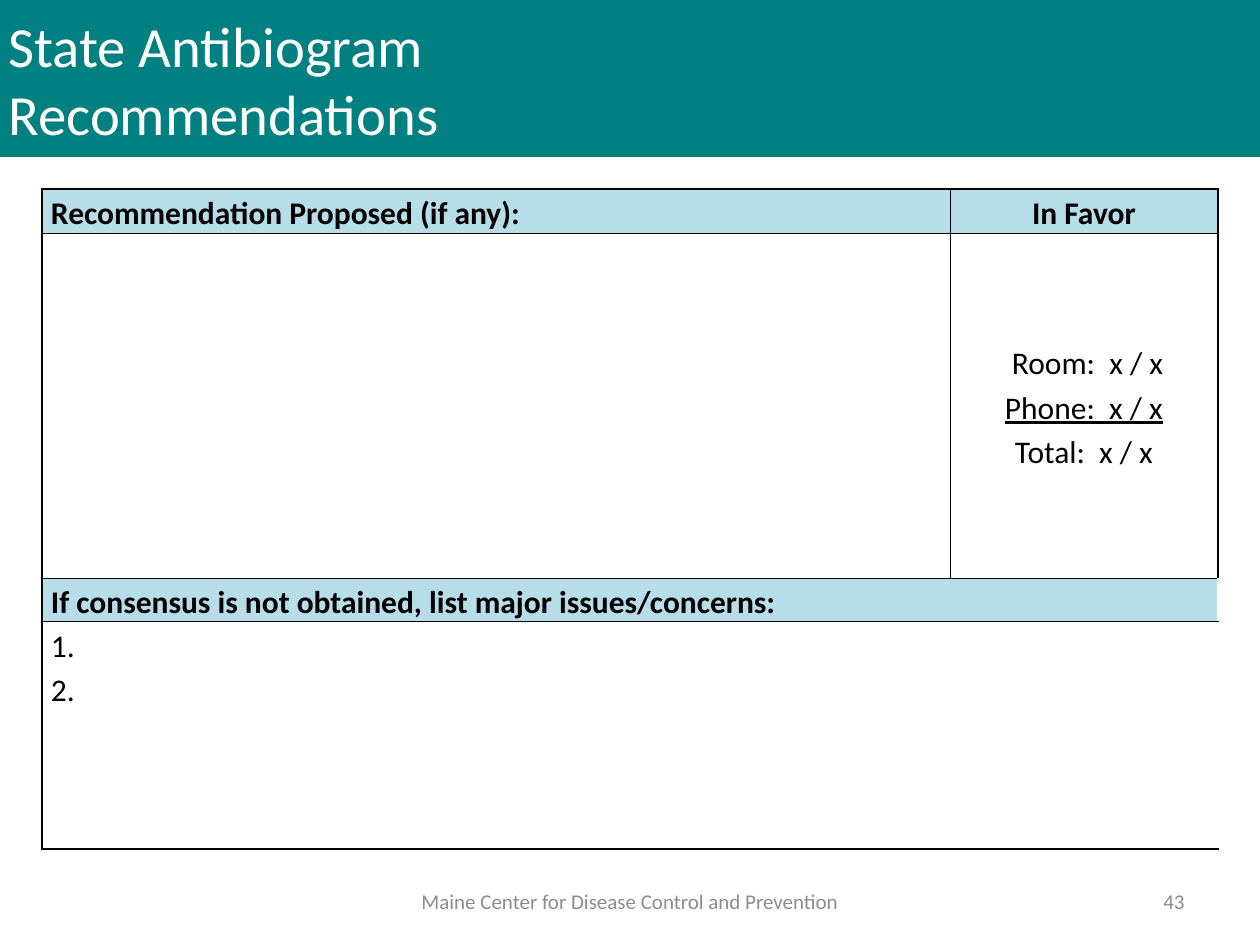
"""Build the State Antibiogram Recommendations slide."""
from lxml.etree import SubElement
from pptx import Presentation
from pptx.dml.color import RGBColor
from pptx.enum.text import MSO_ANCHOR, MSO_AUTO_SIZE, PP_ALIGN
from pptx.oxml.ns import qn
from pptx.util import Emu, Pt

SCALE = 914400 / 126
COLORS = {"teal": "008080", "header": "B6DDE8", "white": "FFFFFF",
          "black": "000000", "grey": "8C8C8C"}


def px(length):
    return Emu(round(length * SCALE))


def write(frame, text, size=18, color="black", bold=False, align=PP_ALIGN.LEFT,
          spacing=1.0, underlined=None):
    frame.text = text
    for para in frame.paragraphs:
        para.alignment = align
        para.line_spacing = spacing
        for line_break in para._p.findall(qn("a:br")):
            SubElement(line_break, qn("a:rPr"), sz=str(round(size * 100)))
        for span in para.runs:
            span.font.name = "Calibri"
            span.font.size = Pt(size)
            span.font.bold = bold
            span.font.underline = span.text == underlined
            span.font.color.rgb = RGBColor.from_string(COLORS[color])


deck = Presentation()
deck.slide_width, deck.slide_height = px(1260), px(945)
page = deck.slides.add_slide(deck.slide_layouts[5])

title = page.shapes.title
title.left, title.top, title.width, title.height = px(-4), px(0), px(1264), px(157)
title.fill.solid()
title.fill.fore_color.rgb = RGBColor.from_string(COLORS["teal"])
write(title.text_frame, "State Antibiogram\vRecommendations", size=32.4, color="white")
title.text_frame.auto_size = MSO_AUTO_SIZE.NONE
title.text_frame.vertical_anchor = MSO_ANCHOR.MIDDLE

footers = [
    ("Maine Center for Disease Control and Prevention", 378, 504, PP_ALIGN.CENTER),
    ("43", 903, 294, PP_ALIGN.RIGHT),
]
for text, left, width, align in footers:
    box = page.shapes.add_textbox(px(left), px(876), px(width), px(50))
    box.text_frame.word_wrap = True
    box.text_frame.vertical_anchor = MSO_ANCHOR.MIDDLE
    write(box.text_frame, text, size=12, color="grey", align=align)

column_widths = [908, 268]
row_heights = [44, 345, 44, 227]
table = page.shapes.add_table(4, 2, px(42), px(189), px(sum(column_widths)),
                              px(sum(row_heights))).table
table.first_row = table.horz_banding = False
for column, width in zip(table.columns, column_widths):
    column.width = px(width)
for row, height in zip(table.rows, row_heights):
    row.height = px(height)
merged_rows = [2, 3]
for row in merged_rows:
    table.cell(row, 0).merge(table.cell(row, 1))

votes = " Room:  x / x\nPhone:  x / x\nTotal:  x / x"
contents = [
    ["Recommendation Proposed (if any):", "In Favor"],
    ["", votes],
    ["If consensus is not obtained, list major issues/concerns:", ""],
    ["1.\n2.", ""],
]
for row, texts in enumerate(contents):
    for column, text in enumerate(texts):
        cell = table.cell(row, column)
        is_header = row in (0, 2)
        cell.margin_left = cell.margin_right = px(9)
        cell.margin_top = cell.margin_bottom = 0
        cell.vertical_anchor = MSO_ANCHOR.MIDDLE if text == votes else MSO_ANCHOR.TOP
        if text:
            write(cell.text_frame, text, bold=is_header, spacing=1.15,
                  align=PP_ALIGN.CENTER if column else PP_ALIGN.LEFT,
                  underlined="Phone:  x / x")
        outer_edges = {"lnL": column == 0, "lnR": column == 1,
                       "lnT": row == 0, "lnB": row == 3}
        for edge, is_outer in outer_edges.items():
            if row in merged_rows and edge in ("lnL", "lnR") and not is_outer:
                continue
            line = SubElement(cell._tc.get_or_add_tcPr(), qn(f"a:{edge}"),
                              w=str(Pt(1 if is_outer else 0.5)))
            fill = SubElement(line, qn("a:solidFill"))
            SubElement(fill, qn("a:srgbClr"), val=COLORS["black"])
        cell.fill.solid()
        cell.fill.fore_color.rgb = RGBColor.from_string(
            COLORS["header" if is_header else "white"])

deck.save("out.pptx")
